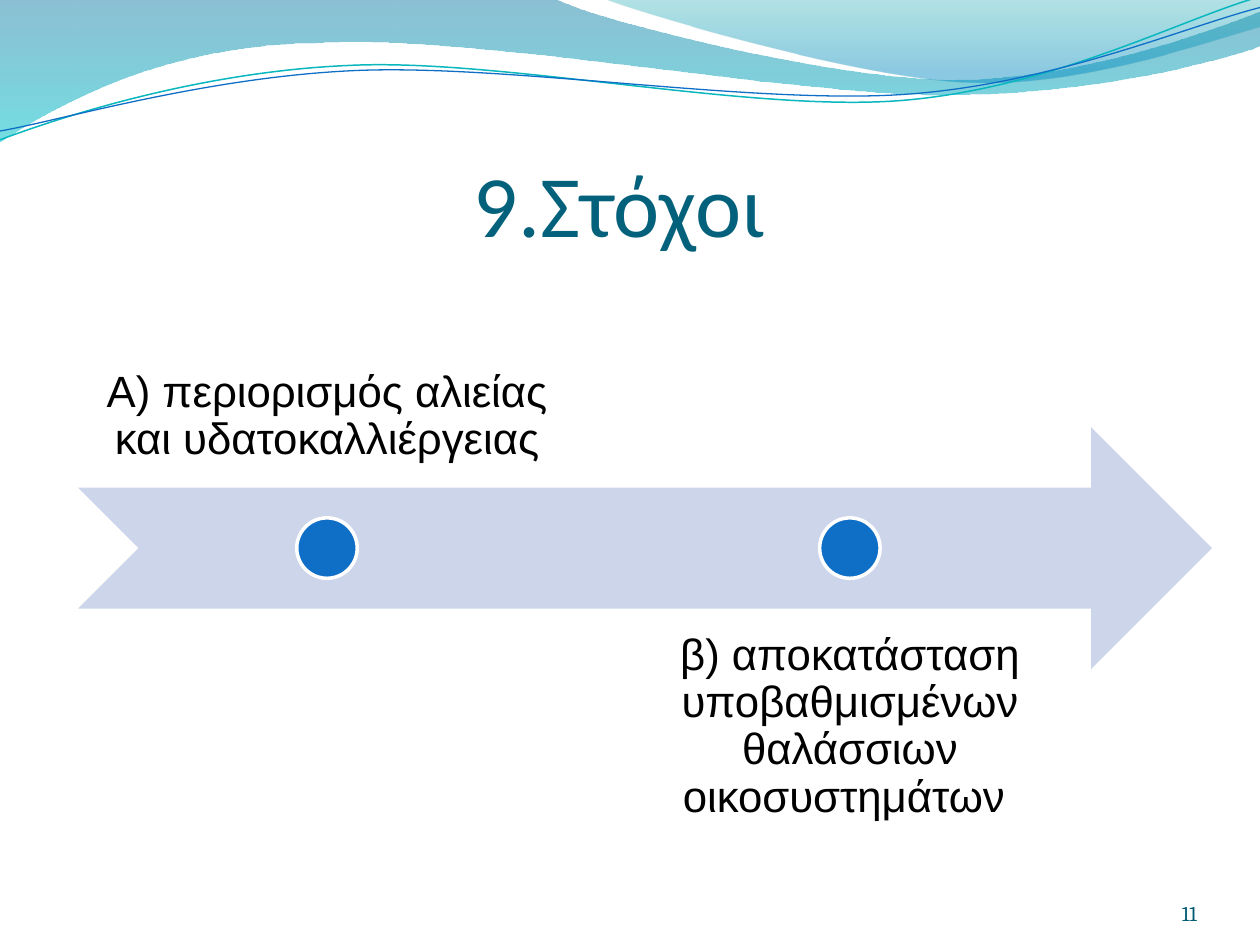
from dataclasses import dataclass

from lxml import etree
from pptx import Presentation
from pptx.dml.color import RGBColor
from pptx.enum import shapes as kinds, text as txt
from pptx.oxml import ns
from pptx.util import Inches, Pt


@dataclass(frozen=True)
class Theme:
    """Colours and type sizes of the slide."""
    title: str = "04617B"
    page: str = "035C75"
    ink: str = "000000"
    arrow: str = "CCD5EA"
    blue: str = "0F6FC6"
    teal: str = "09B7BF"
    white: str = "FFFFFF"
    big: int = 50
    body: int = 25
    small: int = 12


T = Theme()
MID = txt.PP_ALIGN.CENTER
TOP, LOW = txt.MSO_ANCHOR.TOP, txt.MSO_ANCHOR.BOTTOM


def rgb(code):
    """Return a colour from its hex code."""
    return RGBColor.from_string(code)


def bend(shape, path):
    """Join each three lines of a curved segment into one cubic curve."""
    lines = iter(list(shape._element.iter(ns.qn("a:lnTo"))))
    for seg in path[1:]:
        parts = [next(lines) for _ in range(len(seg) // 2)]
        if len(parts) == 3:
            cubic = etree.Element(ns.qn("a:cubicBezTo"))
            parts[0].addprevious(cubic)
            for part in parts:
                cubic.append(part[0])
                part.getparent().remove(part)


def outline(slide, path, close):
    """Draw a freeform of straight (x, y) and cubic (three points) segments."""
    first, *rest = [(Inches(x), Inches(y)) for seg in path
                    for x, y in zip(seg[::2], seg[1::2])]
    pen = slide.shapes.build_freeform(*first)
    pen.add_line_segments(rest, close=close)
    shape = pen.convert_to_shape()
    bend(shape, path)
    shape.shadow.inherit = False
    return shape


def wave(slide, path, stops, angle):
    """Draw a closed wave with a see-through gradient."""
    shape = outline(slide, path, True)
    shape.line.fill.background()
    shape.fill.gradient()
    shape.fill.gradient_angle = angle
    for stop, (pos, code, alpha) in zip(shape.fill.gradient_stops, stops):
        stop.position = pos
        stop.color.rgb = rgb(code)
    marks = shape.fill._xPr.iter(ns.qn("a:srgbClr"))
    for mark, (pos, code, alpha) in zip(marks, stops):
        etree.SubElement(mark, ns.qn("a:alpha")).set("val", str(alpha * 1000))


def curve(slide, path, code, width):
    """Draw an open curved line."""
    shape = outline(slide, path, False)
    shape.fill.background()
    shape.line.color.rgb = rgb(code)
    shape.line.width = Pt(width)


def solid(slide, kind, box, code, edge=None):
    """Draw a filled preset shape with an optional edge."""
    shape = slide.shapes.add_shape(kind, *map(Inches, box))
    shape.shadow.inherit = False
    shape.fill.solid()
    shape.fill.fore_color.rgb = rgb(code)
    if edge:
        shape.line.color.rgb = rgb(edge)
        shape.line.width = Pt(2)
    else:
        shape.line.fill.background()


def label(slide, words, box, font, size, code, align=MID, anchor=LOW, pad=0, lead=None):
    """Place one paragraph of text."""
    frame = slide.shapes.add_textbox(*map(Inches, box)).text_frame
    frame.word_wrap = True
    frame.vertical_anchor = anchor
    frame.margin_left = frame.margin_right = Inches(pad)
    frame.margin_top = frame.margin_bottom = Inches(pad)
    par = frame.paragraphs[0]
    par.text = words
    par.alignment = align
    par.line_spacing = lead
    par.font.name = font
    par.font.size = Pt(size)
    par.font.color.rgb = rgb(code)


def header(slide):
    """Draw the waves and lines along the top."""
    wave(slide, [(0, 0), (4.4, -0.01), (4.76, 0.17, 6.64, 0.63, 7.58, 0.63),
                 (8.53, 0.63, 9.58, 0.26, 10, 0.09), (10.01, 0.36),
                 (9.83, 0.44, 8.7, 0.76, 7.46, 0.75),
                 (6.22, 0.75, 3.82, 0.28, 2.57, 0.34),
                 (1.29, 0.35, 0.46, 0.83, -0.01, 1.13)],
         [(0, "0074A0", 45), (1, "00C4CD", 55)], 270)
    wave(slide, [(4.79, -0.01), (5.09, 0.11, 6.82, 0.62, 7.69, 0.65),
                 (8.56, 0.69, 9.61, 0.32, 10, 0.21), (10, 0)],
         [(0.2, "008ABF", 45), (1, "00A0A8", 30)], 90)
    curve(slide, [(0, 1.11), (0.48, 0.93, 1.58, 0.57, 2.77, 0.52),
                  (3.95, 0.46, 5.93, 0.89, 7.13, 0.8),
                  (8.33, 0.71, 9.38, 0.15, 9.98, -0.02)], T.teal, 0.85)
    curve(slide, [(0, 1.04), (0.47, 0.96, 1.64, 0.61, 2.83, 0.56),
                  (4.03, 0.51, 5.97, 0.83, 7.17, 0.75),
                  (8.36, 0.67, 9.41, 0.21, 10, 0.06)], T.blue, 0.75)


def goals(slide):
    """Draw the arrow with a dot and a text for each goal."""
    left, top, wide, high, dot = 0.62, 3.39, 3.95, 1.92, 0.48
    solid(slide, kinds.MSO_SHAPE.NOTCHED_RIGHT_ARROW, (left, top, 9, high), T.arrow)
    items = [("Α) περιορισμός αλιείας και υδατοκαλλιέργειας", top - 0.75 * high, LOW),
             ("β) αποκατάσταση υποβαθμισμένων θαλάσσιων οικοσυστημάτων ",
              top + 0.75 * high, TOP)]
    for i, (words, y, anchor) in enumerate(items):
        x = left + i * 4.15
        label(slide, words, (x, y, wide, high), "Arial", T.body, T.ink,
              anchor=anchor, pad=0.19, lead=0.9)
        solid(slide, kinds.MSO_SHAPE.OVAL,
              (x + (wide - dot) / 2, top + (high - dot) / 2, dot, dot), T.blue, T.white)


def main():
    """Build and save the slide."""
    deck = Presentation()
    deck.slide_width, deck.slide_height = Inches(10), Inches(7.5)
    slide = deck.slides.add_slide(deck.slide_layouts[6])
    header(slide)
    label(slide, "9.Στόχοι ", (0.5, 0.77, 9, 1.25), "Calibri", T.big, T.title)
    goals(slide)
    label(slide, "11", (8.67, 6.95, 0.83, 0.4), "Cambria", T.small, T.page,
          align=txt.PP_ALIGN.RIGHT)
    deck.save("out.pptx")


if __name__ == "__main__":
    main()
